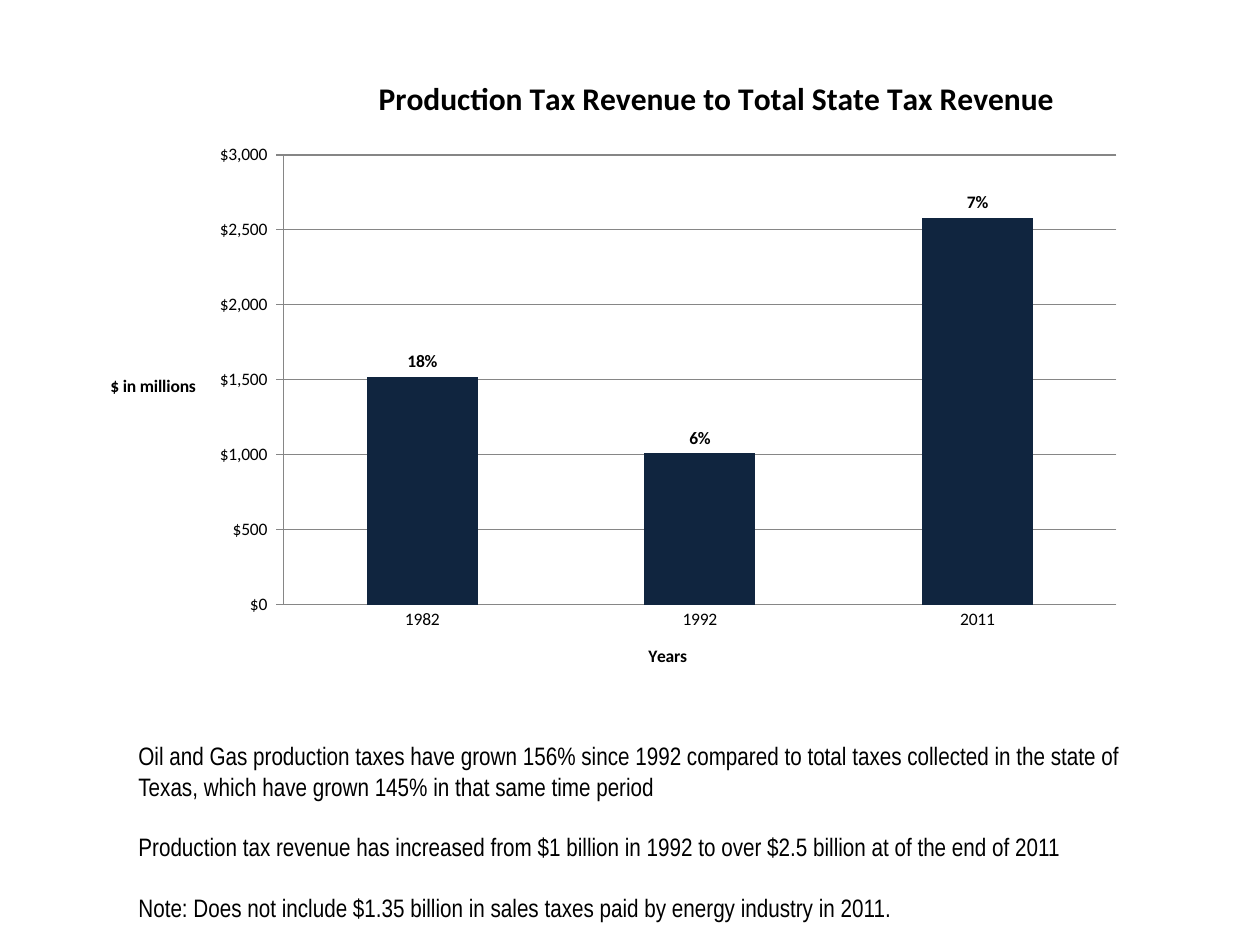
from lxml.etree import SubElement
from pptx import Presentation
from pptx.chart.data import CategoryChartData
from pptx.dml.color import RGBColor
from pptx.enum.chart import XL_CHART_TYPE, XL_LABEL_POSITION, XL_TICK_MARK
from pptx.enum.text import MSO_ANCHOR
from pptx.oxml.ns import qn
from pptx.util import Inches, Pt

COLORS = {"text": "000000", "bar": "10253F", "line": "868686"}
MONEY = '"$"#,##0_);[Red]\\("$"#,##0\\)'
REVENUE = {"1982": (1520, "18%"), "1992": (1010, "6%"), "2011": (2580, "7%")}
CHART_W, CHART_H = 8.35, 5
NOTES = [
    "Oil and Gas production taxes have grown 156% since 1992 compared to total taxes "
    "collected in the state of Texas, which have grown 145% in that same time period",
    "Production tax revenue has increased from $1 billion in 1992 to over $2.5 billion "
    "at of the end of 2011",
    "Note: Does not include $1.35 billion in sales taxes paid by energy industry in 2011.",
]


class SlideBuilder:
    """Holds the style and the current slide."""

    def __init__(self, prs):
        self.s = prs.slides.add_slide(prs.slide_layouts[6])
        self.body = {"name": "Arial Narrow", "size": Pt(14.4), "bold": False}
        self.label = {"name": "Calibri", "size": Pt(10), "bold": False}
        self.strong = {**self.label, "bold": True}
        self.heading = {**self.strong, "size": Pt(18)}

    def color(self, name):
        return RGBColor.from_string(COLORS[name])

    def font(self, font, style):
        for key, value in style.items():
            setattr(font, key, value)
        font.color.rgb = self.color("text")

    def layout(self, parent, x, y, w=None, h=None):
        layout = parent.find(qn("c:layout"))
        if layout is None:
            layout = parent.makeelement(qn("c:layout"))
            tx = parent.find(qn("c:tx"))
            if tx is None:
                parent.insert(0, layout)
            else:
                tx.addnext(layout)
        for child in list(layout):
            layout.remove(child)
        values = {"xMode": "edge", "yMode": "edge", "x": x / CHART_W, "y": y / CHART_H}
        if w:
            values = {"layoutTarget": "inner", **values, "w": w / CHART_W, "h": h / CHART_H}
        manual = SubElement(layout, qn("c:manualLayout"))
        for key, value in values.items():
            SubElement(manual, qn(f"c:{key}")).set("val", str(value))

    def title(self, owner, text, style, x, y):
        tf = owner.text_frame
        tf.text = text
        self.font(tf.paragraphs[0].runs[0].font, style)
        tf._txBody.bodyPr.set("rot", "0")
        self.layout(owner._element, x, y)

    def chart(self, x, y):
        data = CategoryChartData(number_format=MONEY)
        data.categories = list(REVENUE)
        data.add_series("Series 1", [value for value, _ in REVENUE.values()])
        kind = XL_CHART_TYPE.COLUMN_CLUSTERED
        box = map(Inches, (x, y, CHART_W, CHART_H))
        chart = self.s.shapes.add_chart(kind, *box, data).chart
        chart.has_legend = False
        self.font(chart.font, self.label)
        self.title(chart.chart_title, "Production Tax Revenue to Total State Tax Revenue",
                   self.heading, 2.29, 0.06)
        cat, val = chart.category_axis, chart.value_axis
        self.title(cat.axis_title, "Years", self.strong, 4.45, 4.59)
        self.title(val.axis_title, "$ in millions", self.strong, 0.18, 2.45)
        for key, value in {"minimum_scale": 0, "maximum_scale": 3000, "major_unit": 500,
                           "major_tick_mark": XL_TICK_MARK.OUTSIDE}.items():
            setattr(val, key, value)
        cat.major_tick_mark = XL_TICK_MARK.NONE
        val.tick_labels.number_format = MONEY
        val.tick_labels.number_format_is_linked = False
        for part in (cat, val, val.major_gridlines):
            part.format.line.color.rgb = self.color("line")
            part.format.line.width = Pt(0.75)
        self.layout(chart._chartSpace.chart.plotArea, 1.58, 0.73, 6.61, 3.57)
        self.columns(chart.plots[0])

    def columns(self, plot):
        plot.gap_width = 150
        plot.vary_by_categories = False
        series = plot.series[0]
        series.format.fill.solid()
        series.format.fill.fore_color.rgb = self.color("bar")
        series.data_labels.show_value = True
        self.font(series.data_labels.font, self.strong)
        for i, (_, share) in enumerate(REVENUE.values()):
            label = series.points[i].data_label
            label.text_frame.text = share
            self.font(label.text_frame.paragraphs[0].runs[0].font, self.strong)
            label.position = XL_LABEL_POSITION.OUTSIDE_END

    def text(self, paragraphs, x, y, w, h):
        tf = self.s.shapes.add_textbox(*map(Inches, (x, y, w, h))).text_frame
        tf.word_wrap = True
        tf.vertical_anchor = MSO_ANCHOR.TOP
        for i, text in enumerate(paragraphs):
            p = tf.add_paragraph() if i else tf.paragraphs[0]
            p.space_before = Pt(17.25 if i else 0)
            r = p.add_run()
            r.text = text
            self.font(r.font, self.body)


def main():
    prs = Presentation()
    prs.slide_width, prs.slide_height = Inches(10), Inches(7.5)
    slide = SlideBuilder(prs)
    slide.chart(0.67, 0.5)
    slide.text(NOTES, 1, 5.83, 8.42, 1.25)
    prs.save("out.pptx")


if __name__ == "__main__":
    main()
